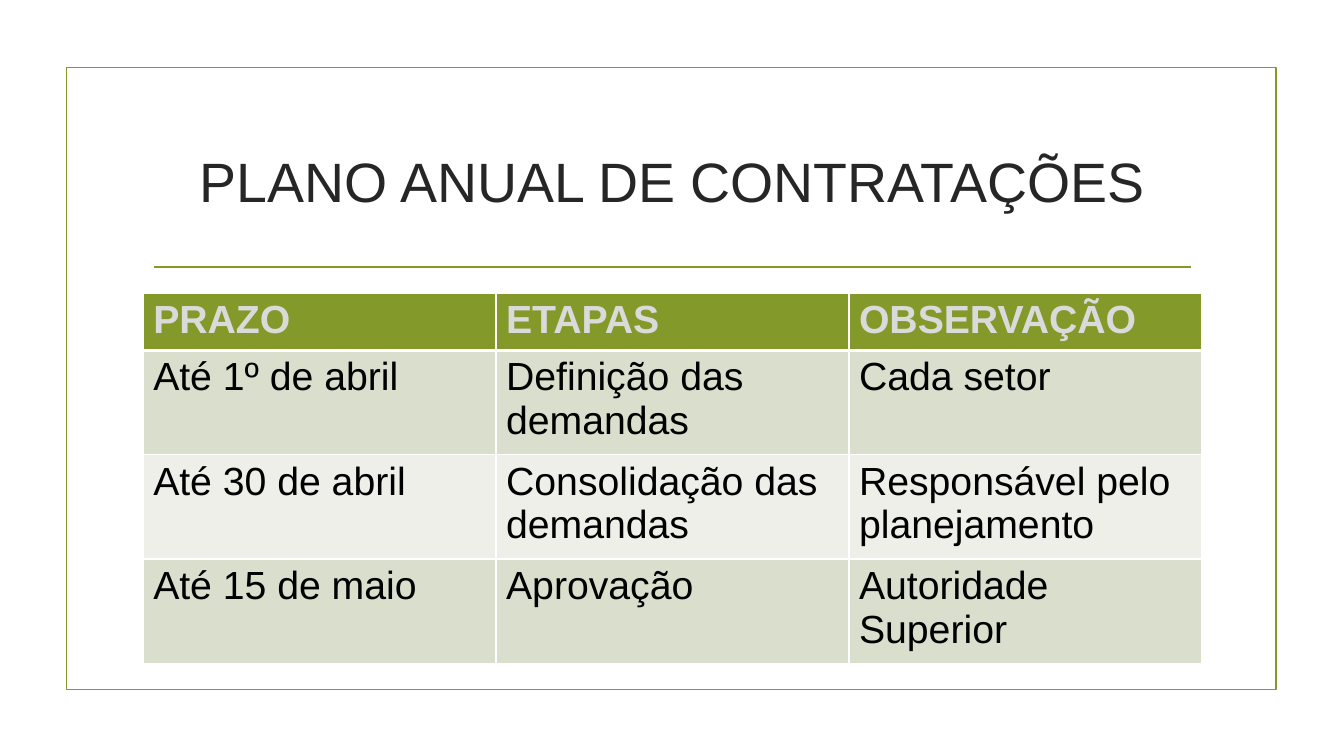
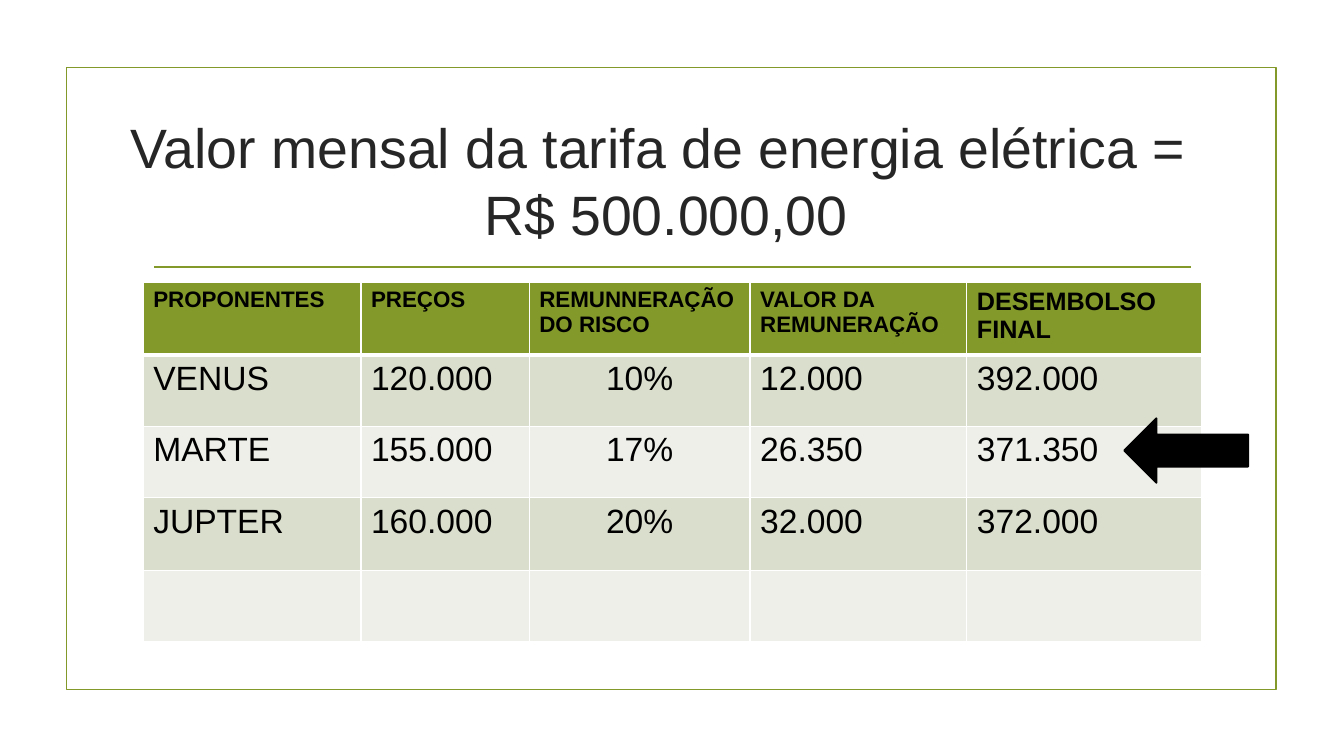
from lxml import etree
from pptx import Presentation
from pptx.dml.color import RGBColor
from pptx.enum.shapes import MSO_CONNECTOR, MSO_SHAPE
from pptx.enum.text import MSO_ANCHOR, PP_ALIGN
from pptx.oxml.ns import qn
from pptx.util import Pt

PX = 9144  # 100 px to the inch
FONT = "Arial"
GREEN, WHITE, BLACK = "83992A", "FFFFFF", "000000"
TITLE_COLOR, PALE_TEXT = "262626", "DADADA"
BANDS = ("D9DECD", "EDEFE8")
LINE_WIDTH = Pt(1.25)
RECTANGLE, LEFT_ARROW = MSO_SHAPE.RECTANGLE, MSO_SHAPE.LEFT_ARROW
STRAIGHT = MSO_CONNECTOR.STRAIGHT
MIDDLE = MSO_ANCHOR.MIDDLE
LEFT, CENTER = PP_ALIGN.LEFT, PP_ALIGN.CENTER

SLIDES = [
    {
        "title": "PLANO ANUAL DE CONTRATAÇÕES",
        "title_box": (142, 107, 1050, 143),
        "table_top": 291,
        "columns": [350, 350, 350],
        "row_heights": [53, 97, 97, 97],
        "header_color": PALE_TEXT,
        "header_sizes": [28, 28, 28],
        "body_size": 28,
        "alignments": [LEFT, LEFT, LEFT],
        "rows": [
            ["PRAZO", "ETAPAS", "OBSERVAÇÃO"],
            ["Até 1º de abril", "Definição das demandas", "Cada setor"],
            ["Até 30 de abril", "Consolidação das demandas", "Responsável pelo planejamento"],
            ["Até 15 de maio", "Aprovação", "Autoridade Superior"],
        ],
    },
    {
        "title": "Valor mensal da tarifa de energia elétrica = \vR$ 500.000,00",
        "title_box": (83, 107, 1155, 143),
        "table_top": 280,
        "columns": [216, 167, 219, 215, 233],
        "row_heights": [72, 71, 71, 72, 71],
        "header_color": BLACK,
        "header_sizes": [16, 16, 16, 16, 18],
        "body_size": 24,
        "alignments": [LEFT, LEFT, CENTER, LEFT, LEFT],
        "rows": [
            ["PROPONENTES", "PREÇOS", "REMUNNERAÇÃO DO RISCO", "VALOR DA REMUNERAÇÃO",
             "DESEMBOLSO FINAL"],
            ["VENUS", "120.000", "10%", "12.000", "392.000"],
            ["MARTE", "155.000", "17%", "26.350", "371.350"],
            ["JUPTER", "160.000", "20%", "32.000", "372.000"],
            ["", "", "", "", ""],
        ],
        "arrow": (1115, 415, 123, 64),
    },
]


def rgb(color):
    return RGBColor.from_string(color)


def format_text(paragraph, size, color, bold, alignment):
    paragraph.alignment = alignment
    for run in paragraph.runs:
        run.font.name = FONT
        run.font.size = Pt(size)
        run.font.bold = bold
        run.font.color.rgb = rgb(color)


presentation = Presentation()
presentation.slide_width = 1333 * PX
presentation.slide_height = 750 * PX

for content in SLIDES:
    slide = presentation.slides.add_slide(presentation.slide_layouts[6])
    shapes = slide.shapes

    # Frame
    frame = shapes.add_shape(RECTANGLE, 66 * PX, 67 * PX, 1200 * PX, 617 * PX)
    frame.shadow.inherit = False
    frame.fill.background()
    frame.line.color.rgb = rgb(GREEN)
    frame.line.width = LINE_WIDTH

    # Rule under the title
    rule = shapes.add_connector(STRAIGHT, 153 * PX, 265 * PX, 1181 * PX, 265 * PX)
    rule.line.color.rgb = rgb(GREEN)
    rule.line.width = LINE_WIDTH
    etree.SubElement(rule._element.spPr, qn("a:effectLst"))

    # Title
    title = shapes.add_textbox(*[length * PX for length in content["title_box"]])
    title.text_frame.word_wrap = True
    title.text_frame.vertical_anchor = MIDDLE
    title.text_frame.text = content["title"]
    format_text(title.text_frame.paragraphs[0], 39.6, TITLE_COLOR, False, CENTER)

    # Table
    rows, columns, heights = content["rows"], content["columns"], content["row_heights"]
    table = shapes.add_table(
        len(rows), len(columns), 142 * PX, content["table_top"] * PX,
        sum(columns) * PX, sum(heights) * PX).table
    for column, width in zip(table.columns, columns):
        column.width = width * PX
    for row_index, texts in enumerate(rows):
        table.rows[row_index].height = heights[row_index] * PX
        is_header = row_index == 0
        for column_index, text in enumerate(texts):
            cell = table.cell(row_index, column_index)

            # White borders, thicker between header and body
            properties = cell._tc.get_or_add_tcPr()
            for side in ("L", "R", "T", "B"):
                thick = (row_index, side) in ((0, "B"), (1, "T"))
                border = etree.SubElement(
                    properties, qn("a:ln" + side), w=str(Pt(3 if thick else 1)))
                border_fill = etree.SubElement(border, qn("a:solidFill"))
                etree.SubElement(border_fill, qn("a:srgbClr"), val=WHITE)

            cell.fill.solid()
            cell.fill.fore_color.rgb = rgb(GREEN if is_header else BANDS[(row_index - 1) % 2])
            cell.text_frame.text = text
            paragraph = cell.text_frame.paragraphs[0]
            if is_header:
                format_text(paragraph, content["header_sizes"][column_index],
                            content["header_color"], True, LEFT)
            else:
                format_text(paragraph, content["body_size"], BLACK, False,
                            content["alignments"][column_index])

    # Arrow pointing at the lowest final cost
    if "arrow" in content:
        arrow = shapes.add_shape(LEFT_ARROW, *[length * PX for length in content["arrow"]])
        arrow.shadow.inherit = False
        arrow.fill.solid()
        arrow.fill.fore_color.rgb = rgb(BLACK)
        arrow.line.color.rgb = rgb(BLACK)
        arrow.line.width = LINE_WIDTH

presentation.save("out.pptx")
